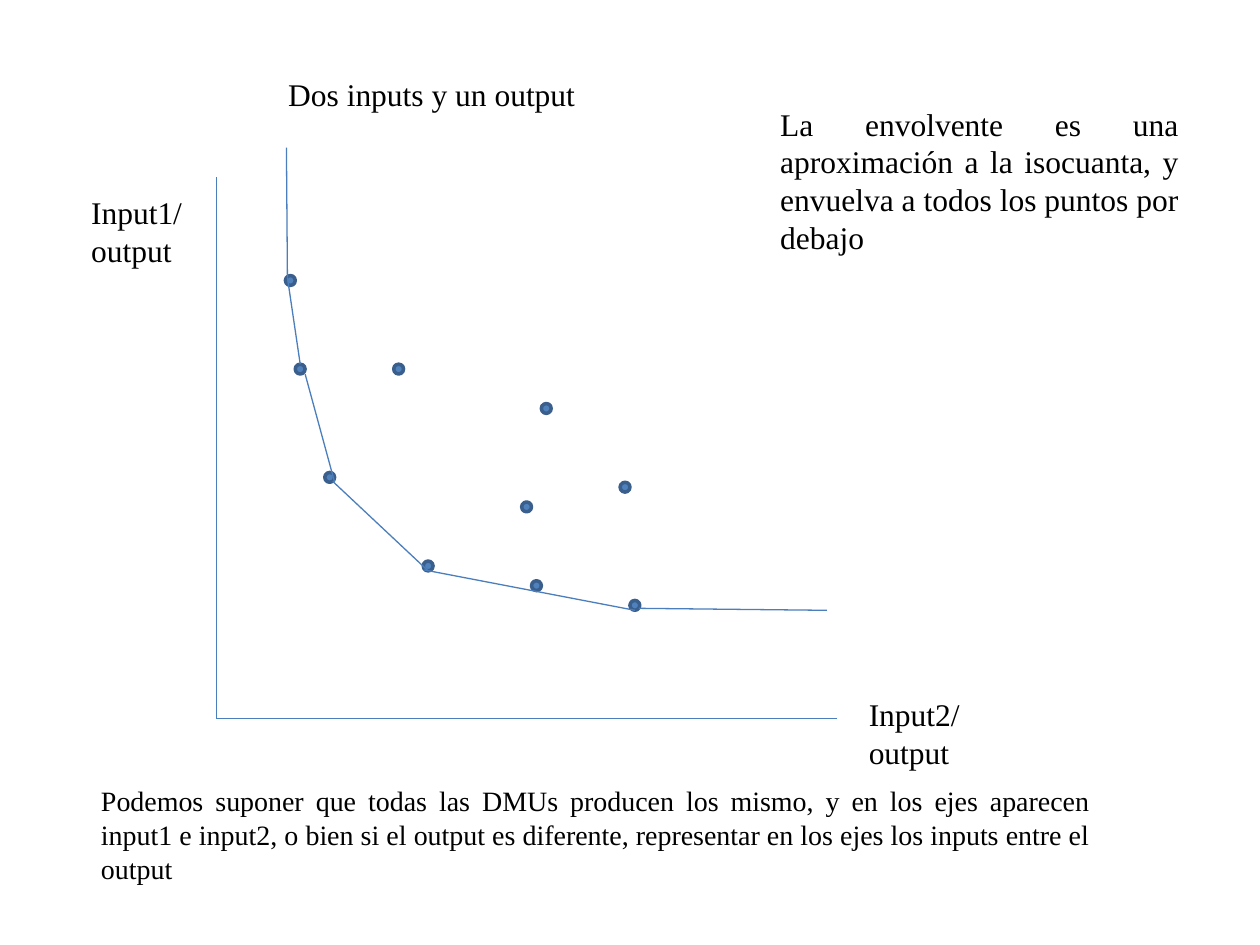
import pptx
import pptx.util
import pptx.dml.color
import pptx.enum.shapes
import pptx.enum.text
import pptx.oxml.ns
import lxml.etree

RGB = pptx.dml.color.RGBColor
ALIGN = pptx.enum.text.PP_ALIGN
BLACK = RGB(0x00, 0x00, 0x00)
LINE_BLUE = RGB(0x4B, 0x7E, 0xBC)
DOT_FILL = RGB(0x4F, 0x81, 0xBD)
DOT_EDGE = RGB(0x3A, 0x5F, 0x8C)
COLS, ROWS = 128, 96  # square grid cells on a 4:3 slide


def write(tf, text, size=18, align=ALIGN.LEFT, color=BLACK, font="Times New Roman"):
    """Fill a text frame with one formatted paragraph."""
    tf.word_wrap = True
    tf.auto_size = pptx.enum.text.MSO_AUTO_SIZE.SHAPE_TO_FIT_TEXT
    tf.vertical_anchor = pptx.enum.text.MSO_ANCHOR.TOP
    p = tf.paragraphs[0]
    p.alignment = align
    r = p.add_run()
    r.text = text
    r.font.size = pptx.util.Pt(size)
    r.font.name = font
    r.font.color.rgb = color


class Canvas:
    """Holds the slide and its style; lengths are grid columns and rows."""

    def __init__(self, prs):
        self.s = prs.slides.add_slide(prs.slide_layouts[5])
        self.col = prs.slide_width / COLS
        self.row = prs.slide_height / ROWS

    def at(self, *lengths):
        units = (self.col, self.row) * 2
        return [round(n * unit) for n, unit in zip(lengths, units)]

    def title(self, box, text):
        sp = self.s.shapes.title
        sp.left, sp.top, sp.width, sp.height = self.at(*box)
        write(sp.text_frame, text)

    def text(self, box, text, **fmt):
        sp = self.s.shapes.add_textbox(*self.at(*box))
        write(sp.text_frame, text, **fmt)

    def line(self, start, end):
        sp = self.s.shapes.add_connector(
            pptx.enum.shapes.MSO_CONNECTOR.STRAIGHT, *self.at(*start, *end))
        sp.line.color.rgb = LINE_BLUE
        sp.line.width = pptx.util.Pt(0.75)
        lxml.etree.SubElement(sp.element.spPr, pptx.oxml.ns.qn("a:effectLst"))

    def dot(self, col, row):
        sp = self.s.shapes.add_shape(
            pptx.enum.shapes.MSO_SHAPE.OVAL, *self.at(col, row, 1, 1))
        sp.shadow.inherit = False
        sp.fill.solid()
        sp.fill.fore_color.rgb = DOT_FILL
        sp.line.color.rgb = DOT_EDGE
        sp.line.width = pptx.util.Pt(2)


def main():
    prs = pptx.Presentation()
    prs.slide_width = pptx.util.Inches(10)
    prs.slide_height = pptx.util.Inches(7.5)
    c = Canvas(prs)
    c.title((28, 7, 76, 5.1), "Dos inputs y un output")

    # Axes and their labels
    origin = (22, 73)
    c.line((22, 18), origin)
    c.line(origin, (85, 73))
    c.text((8, 19, 13, 9), "Input1/output")
    c.text((87, 70, 13, 9), "Input2/output")

    # Decision units
    for col, row in [(29, 28), (30, 37), (40, 37), (33, 48), (43, 57),
                     (53, 51), (54, 59), (64, 61), (55, 41), (63, 49)]:
        c.dot(col, row)

    # Envelope under the dots
    for start, end in [((29.2, 28.2), (29.1, 15)),
                       ((29.2, 28.2), (30.5, 37)),
                       ((31, 38), (34, 49)),
                       ((33.8, 48.9), (43.5, 58)),
                       ((43.1, 57.9), (64.5, 62)),
                       ((64.9, 61.8), (84, 62))]:
        c.line(start, end)

    # Explanations
    c.text((78, 10, 43, 16.8),
           "La envolvente es una aproximación a la isocuanta, "
           "y envuelva a todos los puntos por debajo", align=ALIGN.JUSTIFY)
    c.text((9, 79, 103, 8.2),
           "Podemos suponer que todas las DMUs producen los mismo, y en los ejes "
           "aparecen input1 e input2, o bien si el output es diferente, "
           "representar en los ejes los inputs entre el output",
           size=16, align=ALIGN.JUSTIFY)

    prs.save("out.pptx")


if __name__ == "__main__":
    main()
